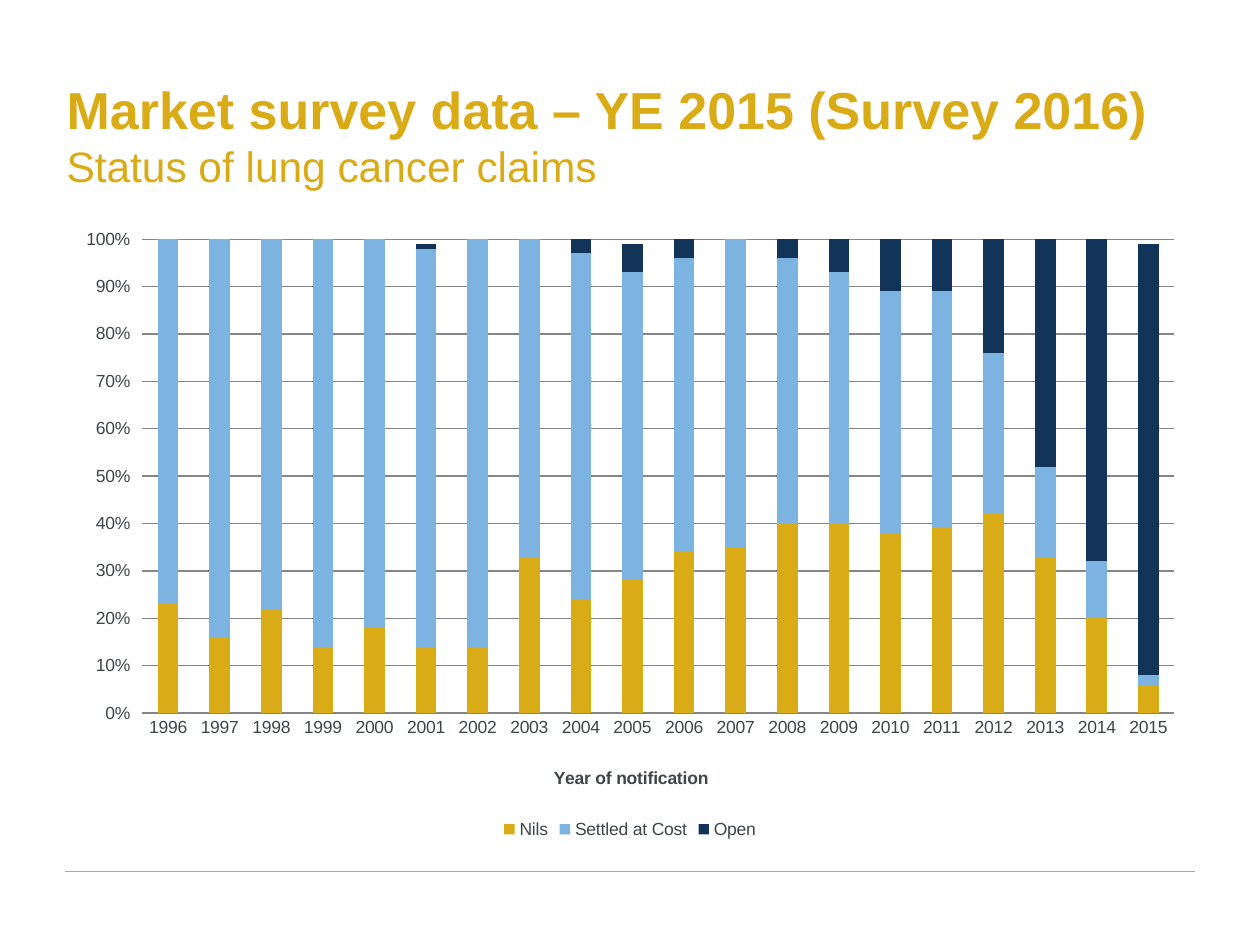
from pptx import Presentation
from pptx.chart.data import CategoryChartData
from pptx.dml.color import RGBColor
from pptx.enum.chart import XL_CHART_TYPE, XL_LEGEND_POSITION, XL_TICK_MARK
from pptx.enum.shapes import MSO_CONNECTOR
from pptx.enum.text import MSO_ANCHOR
from pptx.oxml import parse_xml
from pptx.oxml.ns import nsdecls, qn
from pptx.util import Pt

STACKED = XL_CHART_TYPE.COLUMN_STACKED
BOTTOM = XL_LEGEND_POSITION.BOTTOM
NO_TICK, TICK_OUT = XL_TICK_MARK.NONE, XL_TICK_MARK.OUTSIDE
STRAIGHT = MSO_CONNECTOR.STRAIGHT
MIDDLE = MSO_ANCHOR.MIDDLE

THEME = {
    "font": "Arial",
    "gold": RGBColor(0xD9, 0xAB, 0x16),
    "sky": RGBColor(0x7C, 0xB3, 0xE1),
    "navy": RGBColor(0x11, 0x34, 0x58),
    "text": RGBColor(0x3F, 0x45, 0x48),
    "grid": RGBColor(0x86, 0x86, 0x86),
    "title_size": Pt(29.7),
    "subtitle_size": Pt(24.3),
    "chart_size": Pt(10),
}

TITLE = "Market survey data – YE 2015 (Survey 2016)"
SUBTITLE = "Status of lung cancer claims"
AXIS_TITLE = "Year of notification"
YEARS = [str(year) for year in range(1996, 2016)]
SERIES = [
    ("Nils", "gold", [0.23, 0.16, 0.22, 0.14, 0.18, 0.14, 0.14, 0.33, 0.24, 0.28,
                      0.34, 0.35, 0.4, 0.4, 0.38, 0.39, 0.42, 0.33, 0.2, 0.06]),
    ("Settled at Cost", "sky", [0.77, 0.84, 0.78, 0.86, 0.82, 0.84, 0.86, 0.67, 0.73, 0.65,
                                0.62, 0.65, 0.56, 0.53, 0.51, 0.5, 0.34, 0.19, 0.12, 0.02]),
    ("Open", "navy", [0, 0, 0, 0, 0, 0.01, 0, 0, 0.03, 0.06,
                      0.05, 0, 0.04, 0.07, 0.11, 0.12, 0.24, 0.48, 0.68, 0.91]),
]


def style_font(font, size, color, bold=False):
    font.name = THEME["font"]
    font.size = size
    font.bold = bold
    font.color.rgb = color


def style_line(line, color, width):
    line.color.rgb = color
    line.width = Pt(width)


def set_layout(element, index, target=None, **fractions):
    """Fix a chart part at fractions of the chart area; index is its schema position."""
    for old in element.findall(qn("c:layout")):
        element.remove(old)
    parts = f'<c:layoutTarget val="{target}"/>' if target else ""
    parts += '<c:xMode val="edge"/><c:yMode val="edge"/>'
    parts += "".join(f'<c:{name} val="{value}"/>' for name, value in fractions.items())
    element.insert(index, parse_xml(
        f'<c:layout {nsdecls("c")}><c:manualLayout>{parts}</c:manualLayout></c:layout>'))


def add_title(slide):
    box = slide.shapes.add_textbox(Pt(31), Pt(31.7), Pt(653), Pt(90))
    frame = box.text_frame
    frame.word_wrap = True
    frame.vertical_anchor = MIDDLE
    paragraph = frame.paragraphs[0]
    run = paragraph.add_run()
    run.text = TITLE
    style_font(run.font, THEME["title_size"], THEME["gold"], bold=True)
    paragraph.add_line_break()
    run = paragraph.add_run()
    run.text = SUBTITLE
    style_font(run.font, THEME["subtitle_size"], THEME["gold"])


def add_footer_rule(slide):
    rule = slide.shapes.add_connector(STRAIGHT, Pt(37), Pt(498), Pt(683), Pt(498))
    style_line(rule.line, THEME["gold"], 1)
    rule._element.spPr.append(parse_xml(f'<a:effectLst {nsdecls("a")}/>'))


def add_claims_chart(slide):
    data = CategoryChartData(number_format="0%")
    data.categories = YEARS
    for name, _, values in SERIES:
        data.add_series(name, values)
    chart = slide.shapes.add_chart(STACKED, Pt(36), Pt(126), Pt(648), Pt(356.4), data).chart
    style_font(chart.font, THEME["chart_size"], THEME["text"])
    chart.has_title = False
    chart.has_legend = True
    chart.legend.position = BOTTOM
    chart.legend.include_in_layout = False

    plot = chart.plots[0]
    plot.gap_width = 150
    plot.overlap = 100
    plot.vary_by_categories = False
    for series, (_, color, _) in zip(plot.series, SERIES):
        series.format.fill.solid()
        series.format.fill.fore_color.rgb = THEME[color]

    years = chart.category_axis
    years.major_tick_mark = NO_TICK
    style_line(years.format.line, THEME["grid"], 0.75)
    run = years.axis_title.text_frame.paragraphs[0].add_run()
    run.text = AXIS_TITLE
    style_font(run.font, THEME["chart_size"], THEME["text"], bold=True)

    shares = chart.value_axis
    shares.minimum_scale, shares.maximum_scale, shares.major_unit = 0, 1, 0.1
    shares.major_tick_mark = TICK_OUT
    shares.format.line.fill.background()
    shares.has_major_gridlines = True
    style_line(shares.major_gridlines.format.line, THEME["grid"], 0.75)
    shares.tick_labels.number_format = "0%"
    shares.tick_labels.number_format_is_linked = False

    plot_area = chart._chartSpace.chart.plotArea
    set_layout(plot_area, 0, "inner", x=0.07, y=0.03, w=0.91, h=0.76)
    set_layout(plot_area.find(".//" + qn("c:title")), 1, x=0.43, y=0.87)


def main():
    presentation = Presentation()
    presentation.slide_width, presentation.slide_height = Pt(720), Pt(540)
    slide = presentation.slides.add_slide(presentation.slide_layouts[6])
    add_footer_rule(slide)
    add_title(slide)
    add_claims_chart(slide)
    presentation.save("out.pptx")


if __name__ == "__main__":
    main()
